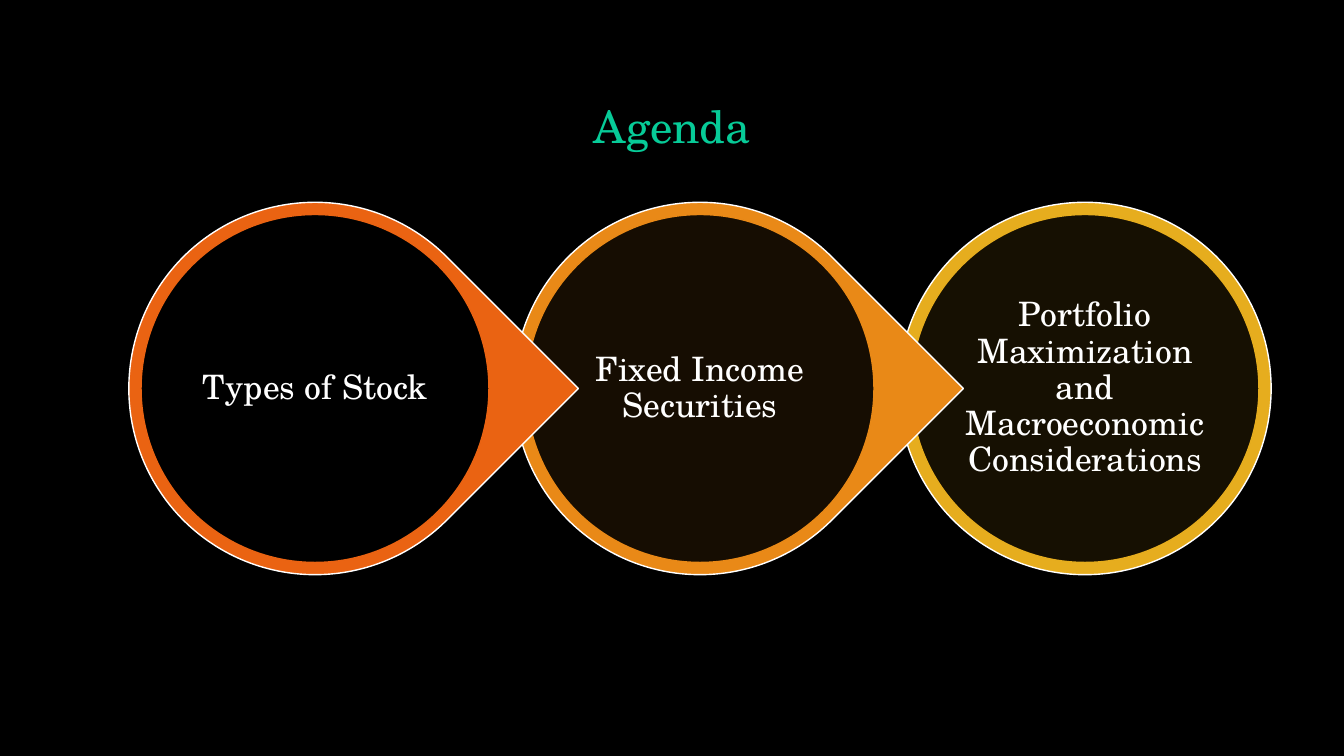
from pptx import Presentation
from pptx.util import Pt
from pptx.dml.color import RGBColor
from pptx.enum.shapes import MSO_SHAPE as Shape
from pptx.enum.text import MSO_ANCHOR as Anchor, PP_ALIGN as Align
from lxml.etree import SubElement
from pptx.oxml.ns import qn


def color(text):
    return RGBColor.from_string(text)


class Deck:
    font = "TeX Gyre Schola"
    black, white, green = "000000", "FFFFFF", "07CB98"

    def __init__(self, width, height):
        self.prs = Presentation()
        self.prs.slide_width, self.prs.slide_height = Pt(width), Pt(height)
        self.slide = self.prs.slides.add_slide(self.prs.slide_layouts[6])
        back = self.slide.background.fill
        back.solid()
        back.fore_color.rgb = color(self.black)

    def round(self, kind, x, y, size, fill, line, alpha=100):
        """Draw a round shape centred on x, y; alpha is opacity in percent."""
        shape = self.slide.shapes.add_shape(
            kind, Pt(x - size / 2), Pt(y - size / 2), Pt(size), Pt(size))
        shape.shadow.inherit = False
        shape.fill.solid()
        shape.fill.fore_color.rgb = color(fill)
        shape.line.color.rgb = color(line)
        shape.line.width = Pt(1)
        if alpha < 100:
            tint = shape.fill._xPr.find(qn("a:solidFill"))[0]
            SubElement(tint, qn("a:alpha"), val=str(alpha * 1000))
        return shape

    def text(self, words, left, top, width, height, size, tone, anchor, inset, after=0):
        box = self.slide.shapes.add_textbox(Pt(left), Pt(top), Pt(width), Pt(height))
        frame = box.text_frame
        frame.word_wrap = True
        frame.vertical_anchor = anchor
        frame.margin_left = frame.margin_right = Pt(inset[0])
        frame.margin_top = frame.margin_bottom = Pt(inset[1])
        para = frame.paragraphs[0]
        para.alignment = Align.CENTER
        para.line_spacing = 0.9
        para.space_after = Pt(after)
        run = para.add_run()
        run.text = words
        run.font.name = self.font
        run.font.size = Pt(size)
        run.font.color.rgb = color(tone)

    def topic(self, words, x, y, tone, alpha, last):
        """Draw a ringed disc with its label; all but the last point right."""
        ring = self.round(Shape.OVAL if last else Shape.TEAR, x, y, 266, tone, self.white)
        if not last:
            ring.adjustments[0] = 1
            ring.rotation = 45
        self.round(Shape.OVAL, x, y, 248.5, self.black, tone, alpha)
        self.text(words, x - 88.5, y - 89, 177, 178, 24, self.white,
                  Anchor.MIDDLE, (2.4, 2.4), 8.4)


def main():
    deck = Deck(960, 540)
    deck.text("Agenda", 102, 29, 756, 84, 32, deck.green, Anchor.BOTTOM, (7.2, 3.6))
    topics = [
        ("Types of Stock", "EA6312", 100),
        ("Fixed Income Securities", "E98917", 90),
        ("Portfolio Maximization and Macroeconomic Considerations", "E6AD1E", 90),
    ]
    final = len(topics) - 1
    # Right to left, so that each point lies over the next disc
    for i, (words, tone, alpha) in reversed(list(enumerate(topics))):
        deck.topic(words, 225 + 275 * i, 277.5, tone, alpha, i == final)
    deck.prs.save("out.pptx")


if __name__ == "__main__":
    main()
